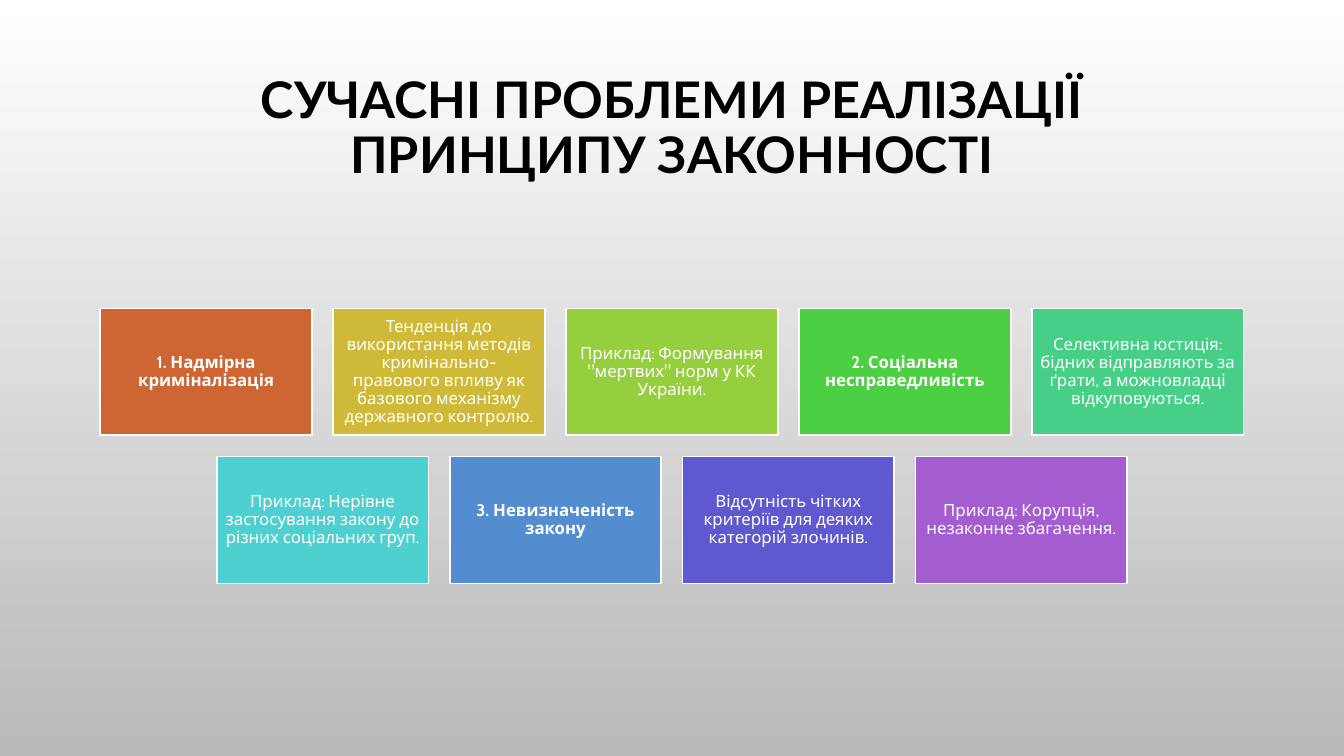
from typing import NamedTuple

from pptx import Presentation
from pptx.dml.color import RGBColor
from pptx.enum.shapes import MSO_SHAPE as Shape
from pptx.enum.text import MSO_ANCHOR as Anchor, PP_ALIGN as Align
from pptx.util import Inches, Pt

WHITE = RGBColor(0xFF, 0xFF, 0xFF)
GREY = RGBColor(0xB9, 0xB9, 0xB9)
BLACK = RGBColor(0x00, 0x00, 0x00)
ORANGE = RGBColor(0xCE, 0x66, 0x33)
GOLD = RGBColor(0xCE, 0xBA, 0x38)
LIME = RGBColor(0x95, 0xCF, 0x3E)
GREEN = RGBColor(0x4D, 0xCF, 0x43)
MINT = RGBColor(0x48, 0xCF, 0x87)
TURQUOISE = RGBColor(0x4E, 0xD0, 0xD0)
BLUE = RGBColor(0x53, 0x8D, 0xD0)
INDIGO = RGBColor(0x60, 0x58, 0xD0)
PURPLE = RGBColor(0xA3, 0x5D, 0xD1)

SLIDE_WIDTH, SLIDE_HEIGHT = 13.33, 7.5
CARD_WIDTH, CARD_HEIGHT, GAP = 2.1, 1.26, 0.21
CARDS_TOP = 3.06


class Card(NamedTuple):
    text: str
    color: RGBColor
    bold: bool = False


CARD_ROWS = [
    [
        Card("1. Надмірна криміналізація", ORANGE, True),
        Card("Тенденція до використання методів кримінально-правового впливу "
             "як базового механізму державного контролю.", GOLD),
        Card('Приклад: Формування "мертвих" норм у КК України.', LIME),
        Card("2. Соціальна несправедливість", GREEN, True),
        Card("Селективна юстиція: бідних відправляють за ґрати, "
             "а можновладці відкуповуються.", MINT),
    ],
    [
        Card("Приклад: Нерівне застосування закону до різних соціальних груп.", TURQUOISE),
        Card("3. Невизначеність закону", BLUE, True),
        Card("Відсутність чітких критеріїв для деяких категорій злочинів.", INDIGO),
        Card("Приклад: Корупція, незаконне збагачення.", PURPLE),
    ],
]


def paint_background(page) -> None:
    fill = page.background.fill
    fill.gradient()
    fill.gradient_angle = 270
    for stop, color in zip(fill.gradient_stops, (WHITE, GREY)):
        stop.color.rgb = color


def write_centred(box, text: str, margins: dict[str, float], font: str,
                  size: float, color: RGBColor, bold: bool) -> None:
    frame = box.text_frame
    frame.word_wrap = True
    frame.vertical_anchor = Anchor.MIDDLE
    for side, inches in margins.items():
        setattr(frame, f"margin_{side}", Inches(inches))
    para = frame.paragraphs[0]
    para.alignment = Align.CENTER
    para.line_spacing = 0.9
    span = para.add_run()
    span.text = text
    for name, value in {"name": font, "size": Pt(size), "bold": bold}.items():
        setattr(span.font, name, value)
    span.font.color.rgb = color


def add_title(page) -> None:
    box = page.shapes.add_textbox(Inches(1), Inches(0.68), Inches(11.33), Inches(1.75))
    margins = {"left": 0.5, "right": 0.5, "top": 0.05, "bottom": 0.59}
    write_centred(box, "СУЧАСНІ ПРОБЛЕМИ РЕАЛІЗАЦІЇ ПРИНЦИПУ ЗАКОННОСТІ",
                  margins, "Lato", 36, BLACK, True)


def add_card(page, card: Card, left: float, top: float) -> None:
    box = page.shapes.add_shape(Shape.RECTANGLE, Inches(left), Inches(top),
                                Inches(CARD_WIDTH), Inches(CARD_HEIGHT))
    box.shadow.inherit = False
    box.fill.solid()
    box.fill.fore_color.rgb = card.color
    box.line.color.rgb = WHITE
    box.line.width = Pt(1.25)
    margins = dict.fromkeys(("left", "right", "top", "bottom"), 0.05)
    write_centred(box, card.text, margins, "Cabin", 12, WHITE, card.bold)


def add_card_rows(page) -> None:
    """Lay the cards out in rows, each centred on the slide."""
    for row, cards in enumerate(CARD_ROWS):
        row_width = len(cards) * (CARD_WIDTH + GAP) - GAP
        row_left = (SLIDE_WIDTH - row_width) / 2
        top = CARDS_TOP + row * (CARD_HEIGHT + GAP)
        for column, card in enumerate(cards):
            add_card(page, card, row_left + column * (CARD_WIDTH + GAP), top)


def main() -> None:
    deck = Presentation()
    deck.slide_width = Inches(SLIDE_WIDTH)
    deck.slide_height = Inches(SLIDE_HEIGHT)
    page = deck.slides.add_slide(deck.slide_layouts[6])
    paint_background(page)
    add_title(page)
    add_card_rows(page)
    deck.save("out.pptx")


if __name__ == "__main__":
    main()
